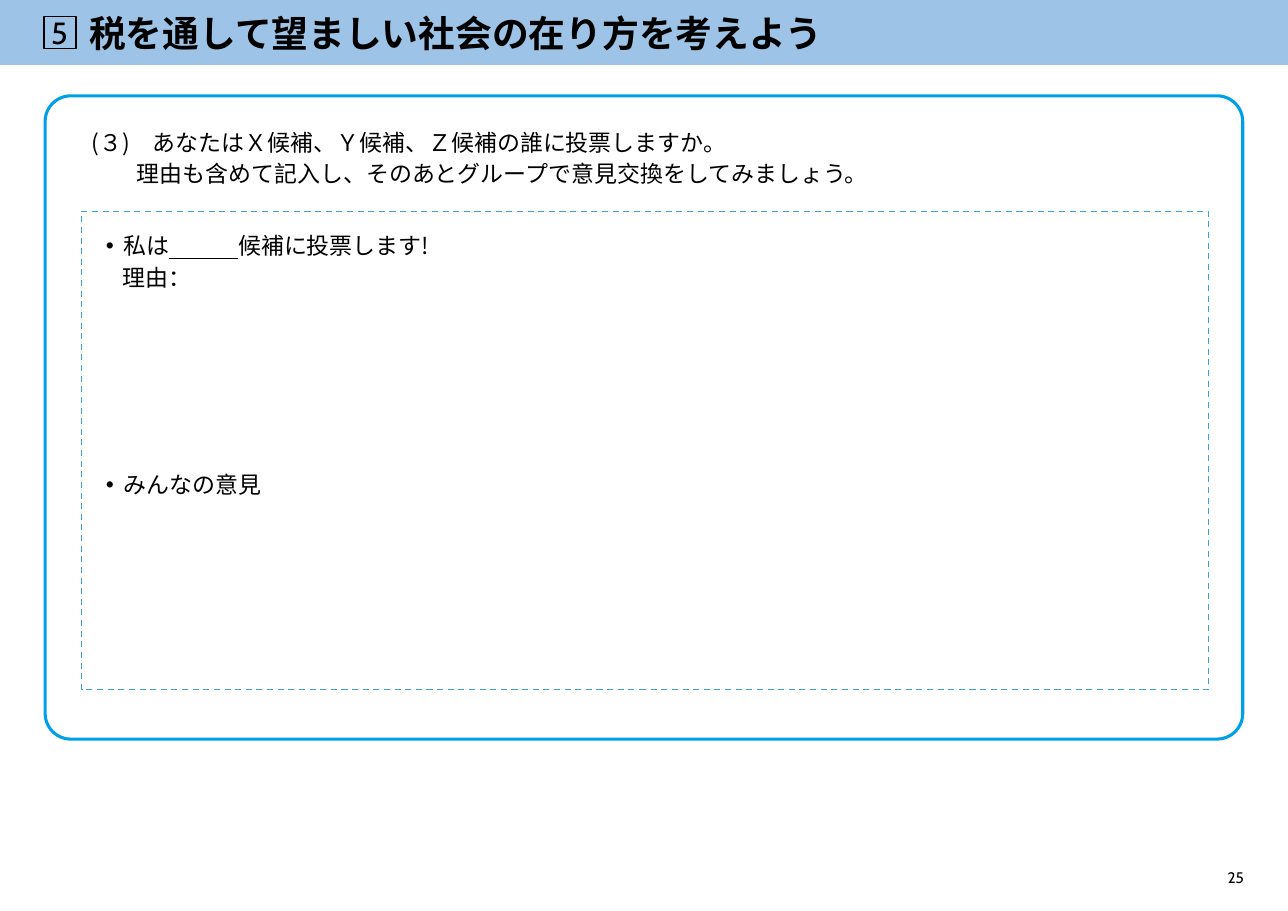
from dataclasses import dataclass
from lxml.etree import SubElement
from pptx import Presentation
from pptx.dml.color import RGBColor
from pptx.enum.dml import MSO_LINE
from pptx.enum.shapes import MSO_SHAPE
from pptx.enum.text import MSO_ANCHOR, MSO_AUTO_SIZE, PP_ALIGN
from pptx.oxml.ns import qn
from pptx.util import Pt

SCALE = 9144  # EMU in one px, 100 px to the inch


@dataclass(frozen=True)
class Theme:
    ink: str = "000000"
    band: str = "9DC3E6"
    frame: str = "00A0E9"
    dash: str = "38A1DB"
    latin: str = "Cabin"
    asian: str = "Noto Sans CJK JP"
    title: int = 24
    badge: int = 20
    body: int = 15
    page: int = 10
    lead: float = 1.14


THEME = Theme()


def px(*sizes):
    return [size * SCALE for size in sizes]


def outline(slide, kind, box, fill=None, line=None, width=1):
    shape = slide.shapes.add_shape(kind, *px(*box))
    shape.shadow.inherit = False
    if fill:
        shape.fill.solid()
        shape.fill.fore_color.rgb = RGBColor.from_string(fill)
    else:
        shape.fill.background()
    if line:
        shape.line.color.rgb = RGBColor.from_string(line)
        shape.line.width = Pt(width)
    else:
        shape.line.fill.background()
    return shape


def frame(shape, box, wrap=True, anchor=MSO_ANCHOR.TOP):
    """Set the box of a text shape and bring the shape to the front."""
    shape.left, shape.top, shape.width, shape.height = px(*box)
    tree = shape.element.getparent()
    tree.append(shape.element)
    text = shape.text_frame
    text.margin_left = text.margin_top = 0
    text.margin_right = text.margin_bottom = 0
    text.auto_size = MSO_AUTO_SIZE.NONE
    text.word_wrap = wrap
    text.vertical_anchor = anchor
    return text


def add_run(para, words, size, font, bold=False, under=False):
    run = para.add_run()
    run.text = words
    run.font.size = Pt(size)
    run.font.bold = bold
    run.font.underline = under
    run.font.color.rgb = RGBColor.from_string(THEME.ink)
    run.font.name = font
    asian = SubElement(run.font._element, qn("a:ea"))
    asian.set("typeface", THEME.asian)


def label(slide, box, words, size, align):
    shape = slide.shapes.add_textbox(*px(*box))
    para = frame(shape, box, wrap=False).paragraphs[0]
    para.alignment = align
    add_run(para, words, size, THEME.latin)


def fill_text(text, rows):
    """Each row is (left indent, bullet or None, runs of (words, underline))."""
    for i, (left, mark, runs) in enumerate(rows):
        para = text.add_paragraph() if i else text.paragraphs[0]
        props = para._p.get_or_add_pPr()
        props.set("marL", str(left * SCALE))
        props.set("indent", str(-left * SCALE if mark else 0))
        if mark:
            SubElement(props, qn("a:buChar")).set("char", mark)
        else:
            SubElement(props, qn("a:buNone"))
        para.alignment = PP_ALIGN.JUSTIFY
        para.line_spacing = THEME.lead
        para.space_before = Pt(0)
        for words, under in runs:
            add_run(para, words, THEME.body, THEME.asian, under=under)


def header(slide, box):
    x, y, w, h = box
    outline(slide, MSO_SHAPE.RECTANGLE, box, fill=THEME.band)
    # Numbered badge
    outline(slide, MSO_SHAPE.RECTANGLE, (x + 40, y + 15, 29, 29), line=THEME.ink)
    label(slide, (x + 42, y + 13, 24, 34), "5", THEME.badge, PP_ALIGN.CENTER)
    # Title
    text = frame(slide.shapes.title, (x + 81, y + 13, w - 106, 34),
                 wrap=False, anchor=MSO_ANCHOR.MIDDLE)
    para = text.paragraphs[0]
    para.alignment = PP_ALIGN.LEFT
    add_run(para, "税を通して望ましい社会の在り方を考えよう",
            THEME.title, THEME.latin, bold=True)


def task(slide, box):
    x, y, w, h = box
    card = outline(slide, MSO_SHAPE.ROUNDED_RECTANGLE, box,
                   line=THEME.frame, width=2)
    card.adjustments[0] = 0.04
    # Question
    area = (x + 21, y + 26, 935, 58)
    shape = slide.shapes.add_textbox(*px(*area))
    fill_text(frame(shape, area), [
        (21, None, [("(３)\u3000あなたはＸ候補、Ｙ候補、Ｚ候補の誰に投票しますか。".replace("\u3000", "　"), False)]),
        (62, None, [("理由も含めて記入し、そのあとグループで意見交換をしてみましょう。", False)]),
    ])
    answer(slide, (x + 33, y + 105, w - 64, h - 150))


def answer(slide, box):
    x, y, w, h = box
    area = outline(slide, MSO_SHAPE.RECTANGLE, box, line=THEME.dash)
    area.line.dash_style = MSO_LINE.DASH
    # Own vote and reason
    vote, views = slide.placeholders[1], slide.placeholders[2]
    fill_text(frame(vote, (x + 22, y + 15, 935, 58)), [
        (16, "•", [("私は", False), ("　　　", True), ("候補に投票します!", False)]),
        (15, None, [("理由：", False)]),
    ])
    # Views of the group
    fill_text(frame(views, (x + 22, y + 232, 935, 29)), [
        (16, "•", [("みんなの意見", False)]),
    ])


def main():
    deck = Presentation()
    deck.slide_width, deck.slide_height = px(1169, 827)
    slide = deck.slides.add_slide(deck.slide_layouts[3])
    header(slide, (0, 0, 1169, 59))
    task(slide, (41, 87, 1087, 584))
    # Page number
    label(slide, (1114, 788, 15, 17), "25", THEME.page, PP_ALIGN.RIGHT)
    deck.save("out.pptx")


if __name__ == "__main__":
    main()
